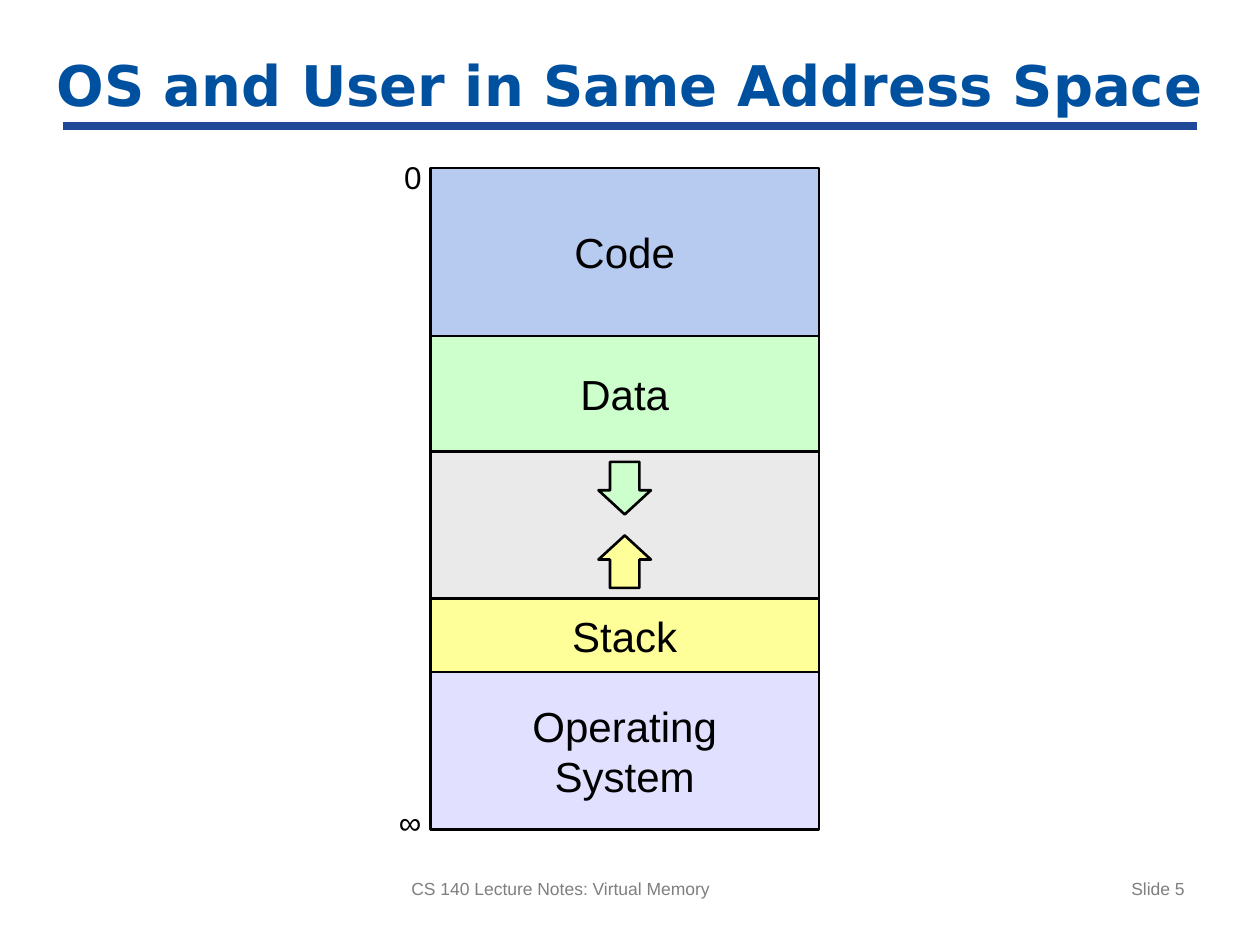
from lxml.etree import SubElement
from pptx import Presentation
from pptx.dml.color import RGBColor
from pptx.enum.shapes import MSO_CONNECTOR, MSO_SHAPE
from pptx.enum.text import MSO_ANCHOR, PP_ALIGN
from pptx.oxml.ns import qn
from pptx.util import Emu, Pt

PX = 9525  # EMU per px, 96 px to the inch

BLACK = RGBColor(0x00, 0x00, 0x00)
GREY = RGBColor(0x7F, 0x7F, 0x7F)
TITLE = RGBColor(0x00, 0x50, 0xA0)
RULE = RGBColor(0x1F, 0x48, 0x99)
FREE = RGBColor(0xEA, 0xEA, 0xEA)
BLUE = RGBColor(0xB7, 0xCB, 0xF0)
GREEN = RGBColor(0xCC, 0xFF, 0xCC)
YELLOW = RGBColor(0xFF, 0xFF, 0x99)
LILAC = RGBColor(0xE1, 0xE1, 0xFF)

# Memory regions from address 0 down: text, height, fill
REGIONS = [
    ("Code", 128, BLUE),
    ("Data", 88, GREEN),
    ("", 112, FREE),
    ("Stack", 56, YELLOW),
    ("Operating\nSystem", 120, LILAC),
]
LEFT, TOP, WIDTH = 328, 128, 296
ARROW, GAP = 40, 8

# Growth arrows: preset, top, fill
ARROWS = [
    (MSO_SHAPE.DOWN_ARROW, 352, GREEN),
    (MSO_SHAPE.UP_ARROW, 352 + ARROW + 2 * GAP, YELLOW),
]

# Address labels: text, left, top, width
LABELS = [("0", 308, 120, 13), ("∞", 304, 612, 17)]

# Footers: text, left, width, alignment
FOOTERS = [
    ("CS 140 Lecture Notes: Virtual Memory", 304, 360, PP_ALIGN.LEFT),
    ("Slide 5", 688, 224, PP_ALIGN.RIGHT),
]


def px(*sizes):
    return [Emu(size * PX) for size in sizes]


def write(shape, text, size=24, font="Arial", color=BLACK, bold=False,
          align=PP_ALIGN.CENTER, anchor=MSO_ANCHOR.MIDDLE, wrap=False, inset=None):
    frame = shape.text_frame
    frame.word_wrap = wrap
    frame.vertical_anchor = anchor
    if inset is not None:
        frame.margin_left = frame.margin_right = Emu(inset * PX)
        frame.margin_top = frame.margin_bottom = Emu(inset * PX)
    para = frame.paragraphs[0]
    para.text = text
    para.alignment = align
    for run in para.runs:
        run.font.size = Pt(size)
        run.font.name = font
        run.font.bold = bold
        run.font.color.rgb = color


def draw(slide, kind, box, fill):
    shape = slide.shapes.add_shape(kind, *px(*box))
    shape.shadow.inherit = False
    shape.fill.solid()
    shape.fill.fore_color.rgb = fill
    shape.line.color.rgb = BLACK
    shape.line.width = Pt(1.5)
    return shape


def label(slide, text, box, **style):
    write(slide.shapes.add_textbox(*px(*box)), text, **style)


def main():
    deck = Presentation()
    deck.slide_width, deck.slide_height = px(960, 720)
    slide = deck.slides.add_slide(deck.slide_layouts[6])

    rule = slide.shapes.add_connector(MSO_CONNECTOR.STRAIGHT, *px(48, 96, 912, 96))
    rule.line.color.rgb = RULE
    rule.line.width = Pt(4.5)
    SubElement(rule._element.spPr, qn("a:effectLst"))

    label(slide, "OS and User in Same Address Space", (32, 32, 896, 64),
          size=32, font="DejaVu Sans", color=TITLE, bold=True)
    for text, left, width, align in FOOTERS:
        label(slide, text, (left, 664, width, 41), size=10, color=GREY,
              align=align, anchor=MSO_ANCHOR.TOP, wrap=True)

    top = TOP
    for text, height, fill in REGIONS:
        block = draw(slide, MSO_SHAPE.RECTANGLE, (LEFT, top, WIDTH, height), fill)
        if text:
            write(block, text)
        top += height

    mid = LEFT + (WIDTH - ARROW) // 2
    for kind, top, fill in ARROWS:
        arrow = draw(slide, kind, (mid, top, ARROW, ARROW), fill)
        arrow.adjustments[0] = 0.56
        arrow.adjustments[1] = 0.46

    for text, left, top, width in LABELS:
        label(slide, text, (left, top, width, 29), size=18,
              anchor=MSO_ANCHOR.TOP, inset=0)

    deck.save("out.pptx")


if __name__ == "__main__":
    main()
